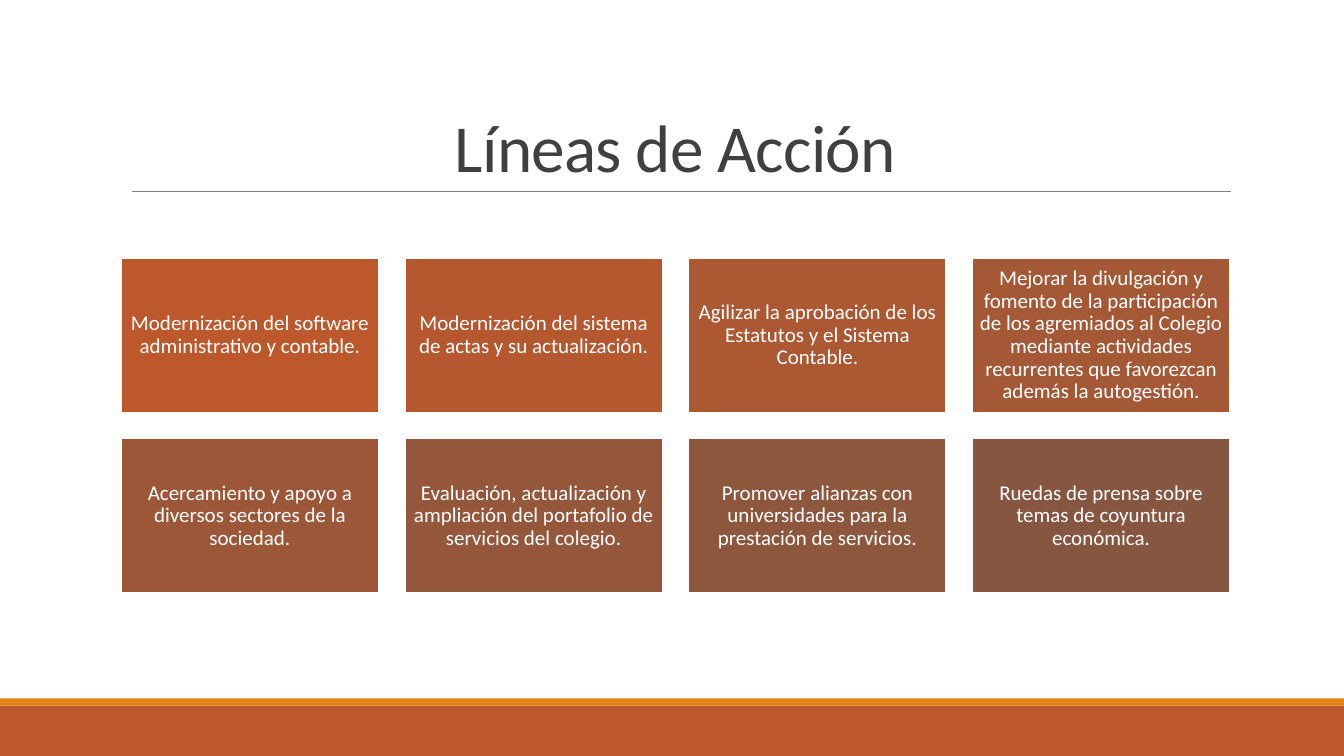
from dataclasses import dataclass

from lxml.etree import SubElement
from pptx import Presentation
from pptx.dml.color import RGBColor
from pptx.enum.shapes import MSO_CONNECTOR, MSO_SHAPE
from pptx.enum.text import MSO_ANCHOR, PP_ALIGN
from pptx.oxml.ns import qn
from pptx.shapes.autoshape import Shape
from pptx.slide import Slide
from pptx.text.text import TextFrame
from pptx.util import Inches, Pt

WIDTH, HEIGHT = 13.33, 7.5
RUST = RGBColor(0xBD, 0x58, 0x2C)
ORANGE = RGBColor(0xE4, 0x83, 0x12)
GREY = RGBColor(0x80, 0x80, 0x80)
DARK = RGBColor(0x40, 0x40, 0x40)
WHITE = RGBColor(0xFF, 0xFF, 0xFF)

# Grid of cards: gap and card height are shares of the card width
COLS = 4
GRID_LEFT, GRID_TOP, GRID_WIDTH = 1.2, 2.56, 11
CARD_W = GRID_WIDTH / (COLS + 0.1 * (COLS - 1))
CARD_H = 0.6 * CARD_W
GAP = 0.1 * CARD_W


@dataclass(frozen=True)
class Card:
    text: str
    color: RGBColor


CARDS = [
    Card("Modernización del software administrativo y contable.", RUST),
    Card("Modernización del sistema de actas y su actualización.",
         RGBColor(0xB5, 0x58, 0x2F)),
    Card("Agilizar la aprobación de los Estatutos y el Sistema Contable.",
         RGBColor(0xAC, 0x58, 0x33)),
    Card("Mejorar la divulgación y fomento de la participación de los agremiados "
         "al Colegio mediante actividades recurrentes que favorezcan además la "
         "autogestión.", RGBColor(0xA4, 0x58, 0x36)),
    Card("Acercamiento y apoyo a diversos sectores de la sociedad.",
         RGBColor(0x9C, 0x57, 0x39)),
    Card("Evaluación, actualización y ampliación del portafolio de servicios "
         "del colegio.", RGBColor(0x95, 0x57, 0x3B)),
    Card("Promover alianzas con universidades para la prestación de servicios.",
         RGBColor(0x8D, 0x57, 0x3E)),
    Card("Ruedas de prensa sobre temas de coyuntura económica.",
         RGBColor(0x86, 0x56, 0x40)),
]


def write(tf: TextFrame, text: str, *, size: float, color: RGBColor,
          anchor: MSO_ANCHOR, line_spacing: float,
          inset: float | None = None, tracking: float = 0) -> None:
    """Fill a frame with one centred paragraph; tracking is in points."""
    tf.word_wrap = True
    tf.vertical_anchor = anchor
    if inset is not None:
        tf.margin_left = tf.margin_right = Inches(inset)
        tf.margin_top = tf.margin_bottom = Inches(inset)
    p = tf.paragraphs[0]
    p.alignment = PP_ALIGN.CENTER
    p.line_spacing = line_spacing
    r = p.add_run()
    r.text = text
    r.font.name = "Calibri"
    r.font.size = Pt(size)
    r.font.color.rgb = color
    if tracking:
        r.font._element.set("spc", str(round(tracking * 100)))


def add_rect(shapes, left: float, top: float, width: float, height: float,
             fill: RGBColor, outline: RGBColor | None = None) -> Shape:
    sp = shapes.add_shape(MSO_SHAPE.RECTANGLE, Inches(left), Inches(top),
                          Inches(width), Inches(height))
    sp.shadow.inherit = False
    sp.fill.solid()
    sp.fill.fore_color.rgb = fill
    if outline is None:
        sp.line.fill.background()
    else:
        sp.line.color.rgb = outline
        sp.line.width = Pt(1.25)
    return sp


def add_title(s: Slide) -> None:
    rule = s.shapes.add_connector(MSO_CONNECTOR.STRAIGHT, Inches(1.31), Inches(1.9),
                                  Inches(12.21), Inches(1.9))
    rule.line.color.rgb = GREY
    rule.line.width = Pt(0.5)
    SubElement(rule._element.spPr, qn("a:effectLst"))
    box = s.shapes.add_textbox(Inches(GRID_LEFT), Inches(0.31),
                               Inches(GRID_WIDTH), Inches(1.59))
    write(box.text_frame, "Líneas de Acción", size=48, color=DARK,
          anchor=MSO_ANCHOR.BOTTOM, line_spacing=0.85, tracking=-0.5)


def add_cards(s: Slide) -> None:
    group = s.shapes.add_group_shape()
    for i, card in enumerate(CARDS):
        row, col = divmod(i, COLS)
        sp = add_rect(group.shapes, GRID_LEFT + col * (CARD_W + GAP),
                      GRID_TOP + row * (CARD_H + GAP), CARD_W, CARD_H,
                      card.color, WHITE)
        write(sp.text_frame, card.text, size=15, color=WHITE,
              anchor=MSO_ANCHOR.MIDDLE, line_spacing=0.9, inset=0.06)


def main() -> None:
    prs = Presentation()
    prs.slide_width, prs.slide_height = Inches(WIDTH), Inches(HEIGHT)
    s = prs.slides.add_slide(prs.slide_layouts[6])
    add_rect(s.shapes, 0, 7, WIDTH, 0.5, RUST)
    add_rect(s.shapes, 0, 6.93, WIDTH, 0.07, ORANGE)
    add_title(s)
    add_cards(s)
    prs.save("out.pptx")


if __name__ == "__main__":
    main()
